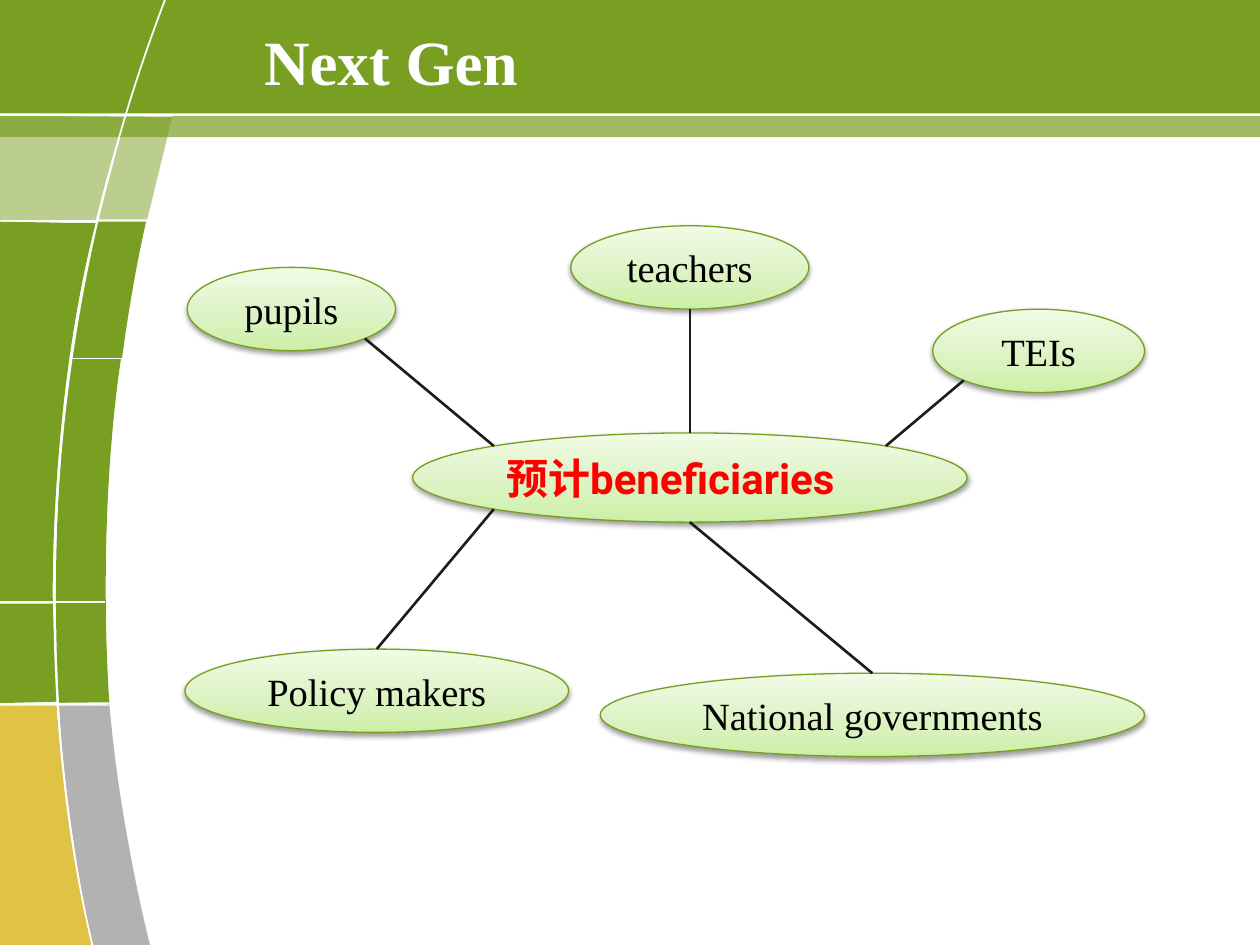
from dataclasses import dataclass
from math import cos, radians, sin

from lxml.etree import SubElement
from pptx import Presentation
from pptx.dml.color import RGBColor as Rgb
from pptx.enum.shapes import MSO_CONNECTOR as Connector, MSO_SHAPE as Preset
from pptx.enum.text import MSO_ANCHOR as Anchor, PP_ALIGN as Align
from pptx.oxml.ns import qn
from pptx.util import Pt


@dataclass(frozen=True)
class Theme:
    green: str = "789F21"
    gold: str = "E0C244"
    grey: str = "B2B2B2"
    white: str = "FFFFFF"
    black: str = "000000"
    red: str = "FF0000"
    link: str = "1C1C1C"
    outline: str = "779F1D"
    gradient: tuple = ((0, "CCEFA5"), (35, "DAF2C0"), (100, "F1FBE6"))
    serif: str = "Times New Roman"
    sans: str = "Roboto"
    chinese: str = "Noto Sans CJK SC"
    title_size: int = 36
    hub_size: int = 24
    label_size: int = 22


@dataclass(frozen=True)
class Band:
    left: float
    top: float
    width: float
    height: float
    color: str
    opacity: int = 100


@dataclass(frozen=True)
class Panel:
    """An outline: each step is a corner (x, y) or a cubic curve of six numbers."""
    color: str
    start: tuple
    steps: tuple
    opacity: int = 100


@dataclass(frozen=True)
class Bubble:
    left: float
    top: float
    width: float
    height: float
    label: str = ""

    def rim(self, angle: float) -> tuple:
        """Point on the ellipse, with the angle measured clockwise from the right."""
        turn = radians(angle)
        return (self.left + self.width / 2 * (1 + cos(turn)),
                self.top + self.height / 2 * (1 + sin(turn)))


@dataclass(frozen=True)
class Link:
    bubble: Bubble
    bubble_angle: float
    hub_angle: float


THEME = Theme()

BANDS = (Band(0, 66.2, 720, 12.2, THEME.green, 70),
         Band(0, 0, 720, 64.8, THEME.green),
         Band(470.9, 524.9, 236.9, 8.6, THEME.white))
PANELS = (
    Panel(THEME.green, (55.4, 126.7), (
        (55.4, 126.7, 69.8, 126.7, 83.5, 126.7), (74.9, 164.2, 69.8, 204.5, 69.8, 204.5),
        (69.8, 204.5, 55.4, 204.5, 41, 204.5), (46.1, 164.9, 55.4, 126.7, 55.4, 126.7))),
    Panel(THEME.green, (41, 205.2), (
        (54.7, 205.2, 69.1, 205.2, 69.1, 205.2), (54.7, 303.8, 62.6, 402.5, 62.6, 402.5),
        (33.8, 401.8), (33.8, 401.8, 26.6, 301.7, 41, 205.2))),
    Panel(THEME.gold, (0, 403.2), (
        (32.4, 403.2), (32.4, 403.2, 36.7, 473.8, 52.6, 540),
        (25.9, 540, 0, 540, 0, 540), (0, 403.2))),
    Panel(THEME.grey, (33.8, 403.2), (
        (48.2, 403.2, 62.6, 403.2, 62.6, 403.2), (68.4, 472.3, 85.7, 540, 85.7, 540),
        (52.6, 540), (52.6, 540, 37.4, 470.9, 33.8, 403.2))),
    Panel(THEME.green, (0, 66.2), (
        (71.3, 67), (71.3, 67, 61.9, 96.5, 54.7, 126),
        (27.4, 126, 0, 126, 0, 126), (0, 66.2)), 50),
    Panel(THEME.green, (72, 66.2), (
        (98.6, 66.2), (84.2, 125.3), (56.2, 125.3), (72, 66.2)), 50),
    Panel(THEME.green, (0, 126.7), (
        (51.1, 127.4, 26.6, 127.4, 54.7, 127.4), (28.1, 231.1, 30.2, 343.4, 30.2, 343.4),
        (0, 343.4), (0, 343.4, 0, 126.7, 0, 126.7))),
    Panel(THEME.green, (0, 344.9), (
        (30.2, 344.9), (32.4, 401), (0, 401.8), (0, 344.9))),
)
ARC_START, ARC_CURVE = (94.3, 0), (-18.7, 295.2, 54.7, 541.4, 52.6, 540)
UNDERLAY = ((0, 131), (59, 131.8))
DIVIDERS = (((0, 65.5), (98.6, 66.2)), ((0.7, 126), (83.5, 126)),
            ((0, 344.2), (59.8, 344.2)), ((0.7, 402.5), (62.6, 401.8)))

HUB = Bubble(235.8, 247.4, 316.8, 51)
LINKS = (
    Link(Bubble(107, 152.8, 119, 47.6, "pupils"), 45, 225),
    Link(Bubble(326.2, 129, 136, 47.6, "teachers"), 90, 270),
    Link(Bubble(533, 176.7, 121, 47.6, "TEIs"), 135, 315),
    Link(Bubble(105.7, 370.9, 219.2, 47.6, "Policy makers"), 270, 135),
    Link(Bubble(343, 384.7, 311, 47.6, "National governments"), 270, 90),
)


def paint(shape, color: str, opacity: int = 100) -> None:
    shape.shadow.inherit = False
    shape.fill.solid()
    shape.fill.fore_color.rgb = Rgb.from_string(color)
    shape.line.fill.background()
    if opacity < 100:
        tint = next(shape.element.spPr.iter(qn("a:srgbClr")))
        SubElement(tint, qn("a:alpha"), val=str(opacity * 1000))


def draw_outline(page, start: tuple, steps: tuple, close: bool):
    points = [(Pt(x), Pt(y)) for step in steps for x, y in zip(step[::2], step[1::2])]
    builder = page.shapes.build_freeform(Pt(start[0]), Pt(start[1]))
    builder.add_line_segments(points, close=close)
    shape = builder.convert_to_shape()
    # Join the three points of each curve into one cubic segment
    route = next(shape.element.spPr.iter(qn("a:path")))
    segments = iter(route.findall(qn("a:lnTo")))
    for step in steps:
        segment = next(segments)
        if len(step) == 6:
            curve = SubElement(route, qn("a:cubicBezTo"))
            segment.addprevious(curve)
            for part in (segment, next(segments), next(segments)):
                curve.append(part[0])
                route.remove(part)
    return shape


def draw_line(page, start: tuple, end: tuple, color: str, width: float) -> None:
    line = page.shapes.add_connector(
        Connector.STRAIGHT, *(Pt(value) for value in (*start, *end)))
    line.line.color.rgb = Rgb.from_string(color)
    line.line.width = Pt(width)
    SubElement(line.element.spPr, qn("a:effectLst"))


def style(span, font: str, size: int, color: str, bold: bool = False) -> None:
    span.font.name, span.font.size, span.font.bold = font, Pt(size), bold
    span.font.color.rgb = Rgb.from_string(color)


def draw_bubble(page, bubble: Bubble):
    shape = page.shapes.add_shape(Preset.OVAL, Pt(bubble.left), Pt(bubble.top),
                                  Pt(bubble.width), Pt(bubble.height))
    shape.fill.gradient()
    shape.fill.gradient_angle = 90
    stops = next(shape.element.spPr.iter(qn("a:gsLst")))
    for stop in list(stops):
        stops.remove(stop)
    for position, color in THEME.gradient:
        stop = SubElement(stops, qn("a:gs"), pos=str(position * 1000))
        SubElement(stop, qn("a:srgbClr"), val=color)
    shape.line.color.rgb = Rgb.from_string(THEME.outline)
    shape.line.width = Pt(0.75)
    # Soft shadow straight below
    shape.shadow.inherit = False
    effects = shape.element.spPr.find(qn("a:effectLst"))
    shadow = SubElement(effects, qn("a:outerShdw"), blurRad=str(Pt(3.1)),
                        dist=str(Pt(1.6)), dir="5400000", rotWithShape="0")
    tint = SubElement(shadow, qn("a:srgbClr"), val=THEME.black)
    SubElement(tint, qn("a:alpha"), val="38000")
    frame = shape.text_frame
    frame.word_wrap = True
    frame.vertical_anchor = Anchor.MIDDLE
    para = frame.paragraphs[0]
    para.alignment = Align.CENTER
    if bubble.label:
        para.text = bubble.label
        style(para.runs[0], THEME.serif, THEME.label_size, THEME.black)
    return shape


def main() -> None:
    deck = Presentation()
    deck.slide_width, deck.slide_height = Pt(720), Pt(540)
    page = deck.slides.add_slide(deck.slide_layouts[6])

    # Header bands and footer strip
    for band in BANDS:
        strip = page.shapes.add_shape(Preset.RECTANGLE, Pt(band.left), Pt(band.top),
                                      Pt(band.width), Pt(band.height))
        paint(strip, band.color, band.opacity)

    # Curved side panels with white dividers
    draw_line(page, *UNDERLAY, THEME.white, 1)
    for panel in PANELS:
        paint(draw_outline(page, panel.start, panel.steps, True), panel.color, panel.opacity)
    for start, end in DIVIDERS:
        draw_line(page, start, end, THEME.white, 1)
    arc = draw_outline(page, ARC_START, (ARC_CURVE,), False)
    arc.shadow.inherit = False
    arc.fill.background()
    arc.line.color.rgb = Rgb.from_string(THEME.white)
    arc.line.width = Pt(1)

    # Hub and its surrounding groups
    para = draw_bubble(page, HUB).text_frame.paragraphs[0]
    para.alignment = Align.LEFT
    for text, font in (("预计", THEME.chinese), ("beneficiaries", THEME.sans)):
        span = para.add_run()
        span.text = text
        style(span, font, THEME.hub_size, THEME.red, True)
        SubElement(span.font._element, qn("a:ea"), typeface=THEME.chinese)
    for link in LINKS:
        draw_bubble(page, link.bubble)

    # Title
    box = page.shapes.add_textbox(Pt(143.8), Pt(12.2), Pt(509.8), Pt(44.6))
    box.text_frame.word_wrap = True
    box.text_frame.vertical_anchor = Anchor.MIDDLE
    para = box.text_frame.paragraphs[0]
    para.text = "Next Gen"
    style(para.runs[0], THEME.serif, THEME.title_size, THEME.white, True)

    # Links from the groups to the hub
    for link in LINKS:
        draw_line(page, link.bubble.rim(link.bubble_angle), HUB.rim(link.hub_angle),
                  THEME.link, 1.5)

    deck.save("out.pptx")


if __name__ == "__main__":
    main()
